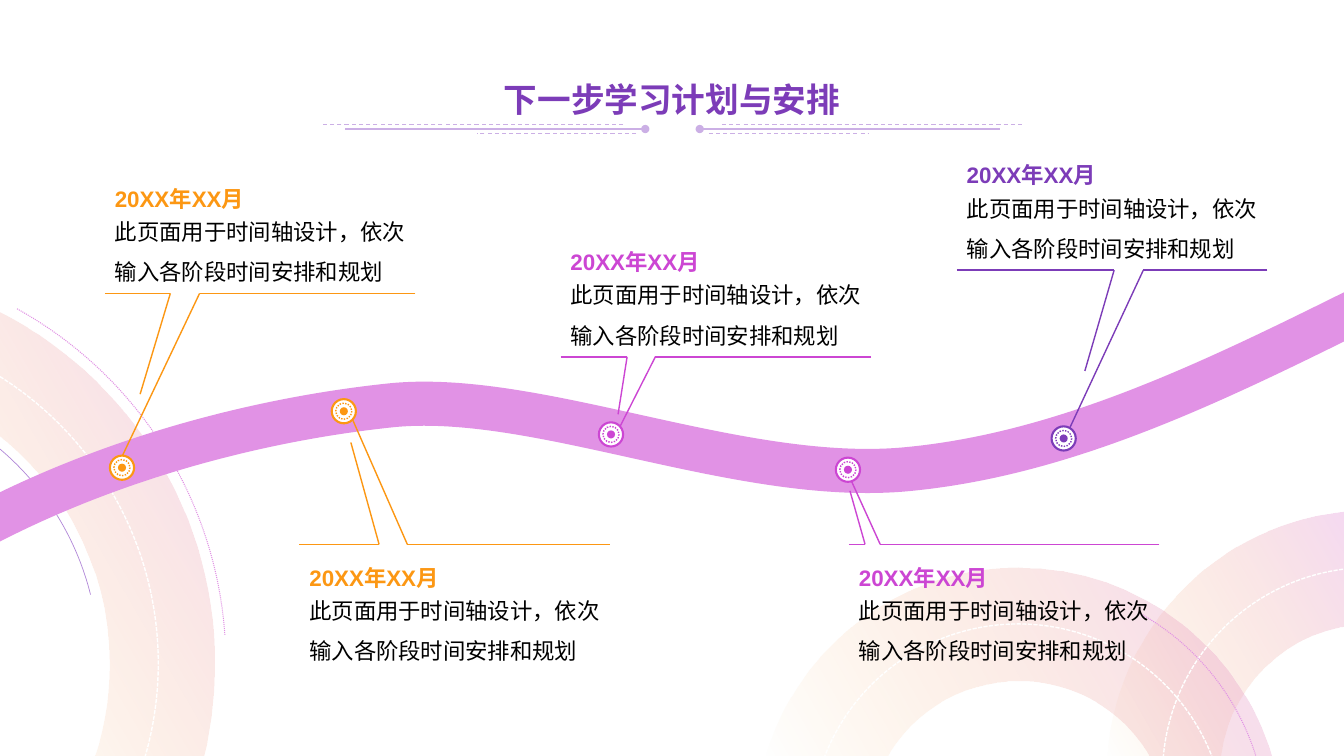
import math

from lxml import etree
from pptx import Presentation
from pptx.dml.color import RGBColor
from pptx.enum.dml import MSO_LINE
from pptx.enum.shapes import MSO_CONNECTOR, MSO_SHAPE
from pptx.enum.text import MSO_ANCHOR, PP_ALIGN
from pptx.oxml.ns import qn
from pptx.util import Pt

PX = 9144
WIDTH, HEIGHT = 1333, 750
LEFT, RIGHT, FLOOR = -24, 1357, 763
FONT = "Arial"
STRAIGHT = MSO_CONNECTOR.STRAIGHT
OVAL, ARC = MSO_SHAPE.OVAL, MSO_SHAPE.ARC
DASH, SYS_DASH, SYS_DOT = MSO_LINE.DASH, MSO_LINE.SQUARE_DOT, MSO_LINE.ROUND_DOT
MIDDLE, CENTER = MSO_ANCHOR.MIDDLE, PP_ALIGN.CENTER

WHITE = RGBColor(0xFF, 0xFF, 0xFF)
BLACK = RGBColor(0x00, 0x00, 0x00)
PURPLE = RGBColor(0x7C, 0x3C, 0xB8)
LILAC = RGBColor(0xB1, 0x87, 0xD8)
PALE = RGBColor(0xCB, 0xAF, 0xE5)
PINK = RGBColor(0xE1, 0x92, 0xE5)
MAGENTA = RGBColor(0xCC, 0x46, 0xD3)
ORANGE = RGBColor(0xFC, 0x97, 0x13)

TITLE = "下一步学习计划与安排"
DATE = "20XX年XX月"
BODY = "此页面用于时间轴设计，依次输入各阶段时间安排和规划"

RINGS = [
    (1359, 769, 262, 206, 150),
    (1010, 825, 262, 206, 150),
    (-179, 658, 392, 336, 288),
]
ARCS = [
    (-179, 657, 277, 297, 346, LILAC, 0.5, None),
    (-178, 658, 402, 299, 356, PINK, 0.75, SYS_DOT),
    (1010, 824, 247, 299, 356, PINK, 0.75, SYS_DOT),
]
ROAD = [
    (-61, 546), (78, 463), (244, 417), (389, 402), (533, 388),
    (729, 479), (894, 466), (1058, 452), (1211, 375), (1364, 299),
]
STAGES = [
    (104, 165, 126, (169, 198), ((139, 391), (121, 453)), (121, 464), ORANGE),
    (949, 142, 126, (1105, 1134), ((1076, 368), (1058, 431)), (1055, 435), PURPLE),
    (556, 228, 126, (622, 650), ((613, 411), (615, 423)), (606, 431), MAGENTA),
    (297, 541, -1, (376, 404), ((348, 439), (350, 417)), (341, 408), ORANGE),
    (842, 541, -1, (858, 873), ((843, 487), (843, 474)), (841, 466), MAGENTA),
]


def set_line(line, color, width, dash=None):
    """Give an outline its colour, width in points and dash."""
    line.color.rgb = color
    line.width = Pt(width)
    if dash is not None:
        line.dash_style = dash


def add_line(shapes, start, end, color, width=1, dash=None, head=None):
    """Draw a straight connector between two points."""
    cxn = shapes.add_connector(STRAIGHT, *(v * PX for v in (*start, *end)))
    set_line(cxn.line, color, width, dash)
    sp_pr = cxn._element.spPr
    if head:
        etree.SubElement(sp_pr.find(qn("a:ln")), qn("a:headEnd"), type=head)
    etree.SubElement(sp_pr, qn("a:effectLst"))


def add_curve(shapes, points, close=False):
    """Draw an unfilled freeform of cubic curves, three points to each."""
    emu = [(round(x * PX), round(y * PX)) for x, y in points]
    builder = shapes.build_freeform(*emu[0], scale=1.0)
    builder.add_line_segments(emu[1:], close=close)
    sp = builder.convert_to_shape()
    steps = list(sp._element.spPr.iter(qn("a:lnTo")))
    for triple in zip(*[iter(steps)] * 3):
        curve = etree.Element(qn("a:cubicBezTo"))
        triple[0].addprevious(curve)
        for step in triple:
            curve.append(step[0])
            step.getparent().remove(step)
    sp.shadow.inherit = False
    sp.fill.background()
    return sp


def add_round(shapes, kind, cx, cy, radius):
    """Add a shadowless oval or arc around a centre."""
    size = 2 * radius * PX
    sp = shapes.add_shape(kind, (cx - radius) * PX, (cy - radius) * PX, size, size)
    sp.shadow.inherit = False
    return sp


def add_text(shapes, box, text, size, color, bold=False, spacing=None):
    """Add a wrapped text box with one run and return its frame."""
    tf = shapes.add_textbox(*(v * PX for v in box)).text_frame
    tf.word_wrap = True
    p = tf.paragraphs[0]
    if spacing:
        p.line_spacing = spacing
    r = p.add_run()
    r.text = text
    r.font.size = Pt(size)
    r.font.bold = bold
    r.font.color.rgb = color
    r.font.name = FONT
    etree.SubElement(r.font._element, qn("a:ea"), typeface=FONT)
    return tf


def ring_arc(cx, cy, radius):
    """List the curve points of the part of a circle near the slide."""
    floor = math.asin((FLOOR - cy) / radius)
    start = -math.acos((LEFT - cx) / radius) if cx < 0 else -math.pi - floor
    end = -math.acos((RIGHT - cx) / radius) if cx > WIDTH else floor
    splits = [a for a in (-math.pi / 2, 0) if start < a < end]
    angles = [start, *splits, end]

    def at(angle, pull=0):
        """Return a point on the circle, pulled along its tangent."""
        cos, sin = math.cos(angle), math.sin(angle)
        return cx + radius * (cos - pull * sin), cy + radius * (sin + pull * cos)

    points = [at(start)]
    for a, b in zip(angles, angles[1:]):
        pull = 4 / 3 * math.tan((b - a) / 4)
        points += [at(a, pull), at(b, -pull), at(b)]
    return points


def draw_backdrop(shapes):
    """Draw the faded rings, their dashed centre lines and thin arcs."""
    for cx, cy, outer, _, inner in RINGS:
        rim = ring_arc(cx, cy, outer)
        hole = ring_arc(cx, cy, inner)[::-1]
        sp = add_curve(shapes, [*rim, rim[-1], hole[0], *hole], True)
        sp.line.fill.background()
        sp.fill.gradient()
        sp.fill.gradient_angle = 210
        for stop, color in zip(sp.fill.gradient_stops, (PINK, ORANGE)):
            stop.color.rgb = color
        colors = list(sp._element.spPr.iter(qn("a:srgbClr")))
        for clr, alpha in zip(colors, ("37000", "0")):
            etree.SubElement(clr, qn("a:alpha"), val=alpha)
    for cx, cy, _, middle, _ in RINGS:
        sp = add_curve(shapes, ring_arc(cx, cy, middle))
        set_line(sp.line, WHITE, 1, SYS_DASH)
    for cx, cy, radius, start, end, color, width, dash in ARCS:
        sp = add_round(shapes, ARC, cx, cy, radius)
        sp.adjustments[0] = start * 0.6
        sp.adjustments[1] = end * 0.6
        sp.fill.background()
        set_line(sp.line, color, width, dash)


def draw_title(shapes, x, y, w, h):
    """Draw the title with mirrored rules beneath it."""
    tf = add_text(shapes, (x, y, w, h), TITLE, 24, PURPLE, True)
    tf.vertical_anchor = MIDDLE
    tf.paragraphs[0].alignment = CENTER
    mid, base = x + w // 2 + 1, y + h + 5
    for side in (-1, 1):
        for near, far, dy, width, dash, head in (
            (27, 325, 0, 1.25, None, "oval"),
            (36, 194, 4, 0.75, DASH, None),
            (49, 347, -4, 0.75, DASH, None),
        ):
            add_line(shapes, (mid + side * near, base + dy),
                     (mid + side * far, base + dy), PALE, width, dash, head)


def draw_stage(shapes, x, y, rule_dy, gap, tips, color):
    """Draw one dated callout with its split rule and pointer."""
    add_text(shapes, (x, y + 33, 315, 86), BODY, 16, BLACK, spacing=1.5)
    add_text(shapes, (x, y, 247, 46), DATE, 16, color, True, 1.5)
    rule = y + rule_dy
    for end, corner, tip in zip((x, x + 308), gap, tips):
        add_line(shapes, (end, rule), (corner, rule), color)
        add_line(shapes, (corner, rule), tip, color)


def draw_marker(shapes, cx, cy, color):
    """Draw a target-like marker centred on the road."""
    for radius, fill, width, dash in (
        (12, WHITE, 1.5, None), (8, WHITE, 1, SYS_DOT), (4, color, 0, None),
    ):
        sp = add_round(shapes, OVAL, cx, cy, radius)
        sp.fill.solid()
        sp.fill.fore_color.rgb = fill
        if width:
            set_line(sp.line, color, width, dash)
        else:
            sp.line.fill.background()


def main():
    """Build the timeline slide and save it."""
    prs = Presentation()
    prs.slide_width, prs.slide_height = WIDTH * PX, HEIGHT * PX
    shapes = prs.slides.add_slide(prs.slide_layouts[6]).shapes
    draw_backdrop(shapes)
    draw_title(shapes, 313, 73, 707, 50)
    set_line(add_curve(shapes, ROAD).line, PINK, 31.5)
    for x, y, rule_dy, gap, tips, _, color in STAGES:
        draw_stage(shapes, x, y, rule_dy, gap, tips, color)
    for *_, center, color in STAGES:
        draw_marker(shapes, *center, color)
    prs.save("out.pptx")


if __name__ == "__main__":
    main()
